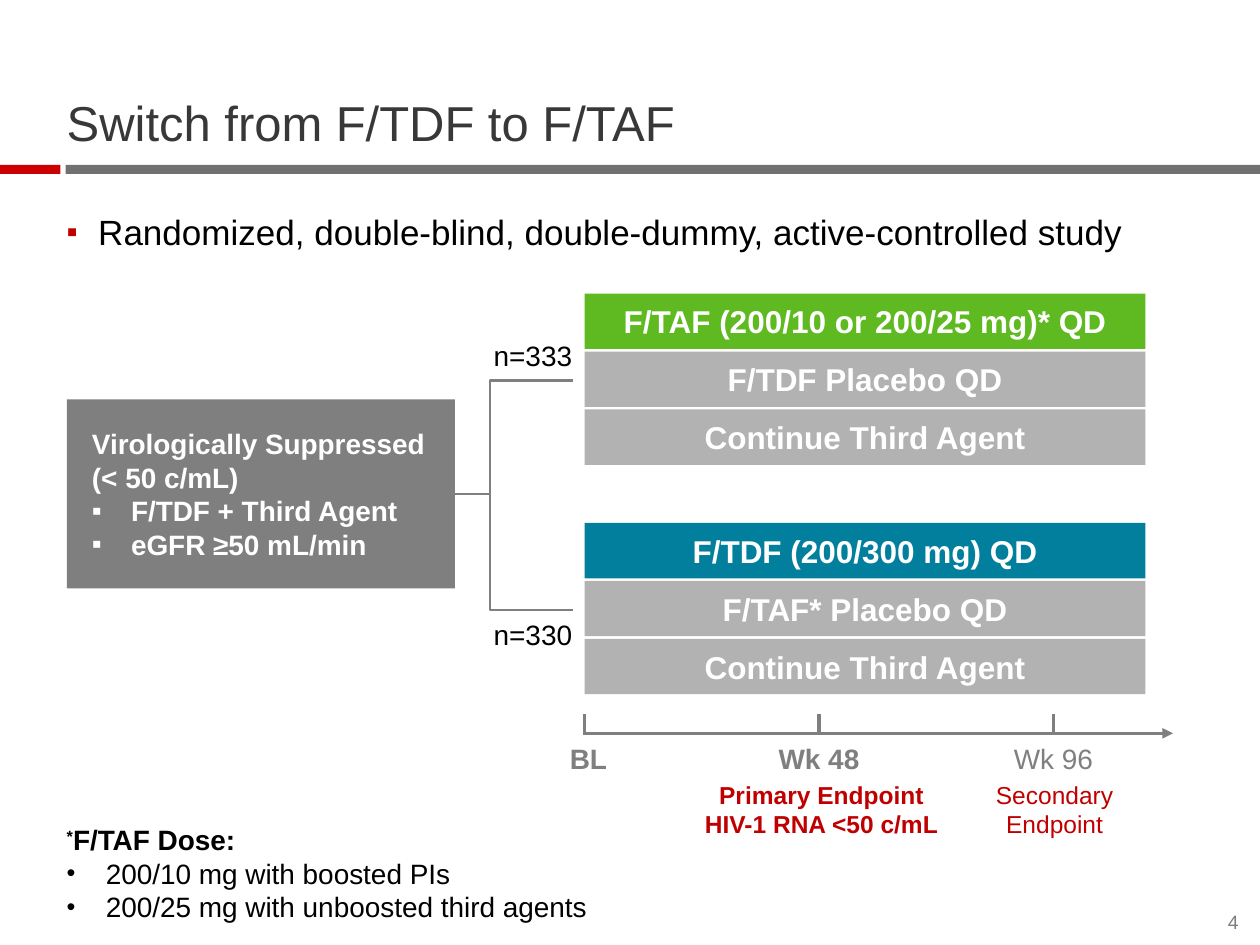
from lxml.etree import SubElement
from pptx import Presentation
from pptx.dml.color import RGBColor
from pptx.enum.shapes import MSO_CONNECTOR, MSO_SHAPE
from pptx.enum.text import MSO_ANCHOR, PP_ALIGN
from pptx.oxml.ns import qn
from pptx.util import Inches, Pt

GREY = "7F7F7F"
RED = "C00000"
WHITE = "FFFFFF"
ARM_LEFT, ARM_WIDTH = 4.64, 4.45
ROW_HEIGHT, ROW_STEP = 0.44, 0.46
DEFAULT_INSETS = (0.1, 0.05, 0.1, 0.05)
NO_INSETS = (0, 0, 0, 0)


def color(hex_value):
    return RGBColor.from_string(hex_value)


def set_bullet(para, char, indent, bullet_color=None, percent=100):
    properties = para._p.get_or_add_pPr()
    properties.set("marL", str(Inches(indent)))
    properties.set("indent", str(Inches(-indent)))
    if bullet_color:
        holder = SubElement(properties, qn("a:buClr"))
        SubElement(holder, qn("a:srgbClr")).set("val", bullet_color)
    SubElement(properties, qn("a:buSzPct")).set("val", str(percent * 1000))
    SubElement(properties, qn("a:buFont")).set("typeface", "Arial")
    SubElement(properties, qn("a:buChar")).set("char", char)


def add_span(para, text, size, ink, bold=False, superscript=False):
    span = para.add_run()
    span.text = text
    span.font.name = "Arial"
    span.font.size = Pt(size)
    span.font.bold = bold
    span.font.color.rgb = color(ink)
    if superscript:
        span.font._element.set("baseline", "30000")


def write(box, text, size=16, ink="000000", bold=False, align=PP_ALIGN.LEFT,
          bullet=None, line_spacing=None, space_before=0):
    """Add one paragraph to a shape; a newline becomes a line break."""
    frame = box.text_frame
    para = frame.paragraphs[0]
    if para.runs:
        para = frame.add_paragraph()
    para.alignment = align
    para.space_before = Pt(space_before)
    if line_spacing:
        para.line_spacing = line_spacing
    if bullet:
        set_bullet(para, **bullet)
    for number, line in enumerate(text.split("\n")):
        if number:
            para.add_line_break()
        if line.startswith("*"):
            add_span(para, "*", size, ink, bold, superscript=True)
            line = line[1:]
        add_span(para, line, size, ink, bold)


def set_frame(box, anchor, insets, wrap=True):
    frame = box.text_frame
    frame.word_wrap = wrap
    frame.vertical_anchor = anchor
    (frame.margin_left, frame.margin_top,
     frame.margin_right, frame.margin_bottom) = map(Inches, insets)


def add_text_box(page, left, top, width, height, anchor=MSO_ANCHOR.TOP,
                 insets=DEFAULT_INSETS, wrap=True):
    box = page.shapes.add_textbox(*map(Inches, (left, top, width, height)))
    set_frame(box, anchor, insets, wrap)
    return box


def add_block(page, left, top, width, height, fill, outline=None,
              kind=MSO_SHAPE.RECTANGLE, insets=DEFAULT_INSETS):
    block = page.shapes.add_shape(kind, *map(Inches, (left, top, width, height)))
    block.shadow.inherit = False
    block.fill.solid()
    block.fill.fore_color.rgb = color(fill)
    if outline:
        block.line.color.rgb = color(outline)
        block.line.width = Pt(1.5)
    else:
        block.line.fill.background()
    set_frame(block, MSO_ANCHOR.MIDDLE, insets)
    return block


def add_line(page, x1, y1, x2, y2, width=2, arrow=False):
    line = page.shapes.add_connector(
        MSO_CONNECTOR.STRAIGHT, *map(Inches, (x1, y1, x2, y2)))
    line.line.color.rgb = color(GREY)
    line.line.width = Pt(width)
    if arrow:
        SubElement(line.line._get_or_add_ln(), qn("a:tailEnd")).set("type", "triangle")
    SubElement(line._element.spPr, qn("a:effectLst"))
    return line


def add_heading(page):
    add_block(page, 0.52, 1.31, 9.48, 0.07, "717171")
    add_block(page, 0, 1.31, 0.48, 0.07, "CC0000")
    title = add_text_box(page, 0.53, 0.47, 9, 0.74, MSO_ANCHOR.BOTTOM, NO_INSETS)
    write(title, "Switch from F/TDF to F/TAF", size=28, ink="383838", line_spacing=0.9)
    design = add_text_box(page, 0.53, 1.67, 9, 0.5, insets=NO_INSETS)
    write(design, "Randomized, double-blind, double-dummy, active-controlled study",
          size=20, space_before=12,
          bullet=dict(char="▪", indent=0.25, bullet_color=RED, percent=90))


def add_population(page):
    add_block(page, 3.89, 3.02, 0.66, 1.82, WHITE, GREY,
              MSO_SHAPE.LEFT_BRACKET).adjustments[0] = 0
    population = add_block(page, 0.53, 3.17, 3.08, 1.5, GREY, insets=(0.2, 0.1, 0.2, 0.1))
    for text in ("Virologically Suppressed", "(< 50 c/mL)"):
        write(population, text, ink=WHITE, bold=True)
    for text in ("F/TDF + Third Agent", "eGFR ≥50 mL/min"):
        write(population, text, ink=WHITE, bold=True, bullet=dict(char="▪", indent=0.31))
    stem = add_line(page, 3.61, 3.92, 3.89, 3.92, width=1.5)
    stem.begin_connect(population, 3)


def add_arm(page, top, fill, treatments, count, count_top):
    for row, treatment in enumerate(treatments):
        block = add_block(page, ARM_LEFT, top + row * ROW_STEP, ARM_WIDTH, ROW_HEIGHT,
                          "B2B2B2" if row else fill)
        write(block, treatment, size=18, ink=WHITE, bold=True, align=PP_ALIGN.CENTER)
    label = add_text_box(page, 3.82, count_top, 0.83, 0.37, wrap=False)
    write(label, count)


def add_timeline(page):
    add_line(page, 4.63, 5.82, 9.31, 5.82, arrow=True)
    visits = [("BL", 4.64, 4.67, True), ("Wk 48", 6.5, 6.5, True),
              ("Wk 96", 8.36, 8.36, False)]
    for visit, tick, center, bold in visits:
        add_line(page, tick, 5.83, tick, 5.67)
        label = add_text_box(page, center - 0.49, 5.84, 0.98, 0.37)
        write(label, visit, ink=GREY, bold=bold, align=PP_ALIGN.CENTER)
    endpoints = [("Primary Endpoint\nHIV-1 RNA <50 c/mL", 5.31, True),
                 ("Secondary\nEndpoint", 7.16, False)]
    for endpoint, left, bold in endpoints:
        label = add_text_box(page, left, 6.14, 2.42, 0.57)
        write(label, endpoint, size=14, ink=RED, bold=bold, align=PP_ALIGN.CENTER)


def add_footer(page):
    doses = add_text_box(page, 0.53, 6.53, 8.9, 0.8, MSO_ANCHOR.BOTTOM, NO_INSETS)
    write(doses, "*F/TAF Dose:", bold=True)
    for dose in ("200/10 mg with boosted PIs", "200/25 mg with unboosted third agents"):
        write(doses, dose, bullet=dict(char="•", indent=0.31, percent=90))
    number = add_text_box(page, 9.56, 7.23, 0.27, 0.18, MSO_ANCHOR.BOTTOM, NO_INSETS)
    write(number, "4", size=11, ink=GREY, align=PP_ALIGN.RIGHT)


def main():
    deck = Presentation()
    deck.slide_width, deck.slide_height = Inches(10), Inches(7.5)
    page = deck.slides.add_slide(deck.slide_layouts[6])
    add_heading(page)
    add_population(page)
    add_arm(page, 2.33, "5EBA20",
            ("F/TAF (200/10 or 200/25 mg)* QD", "F/TDF Placebo QD", "Continue Third Agent"),
            "n=333", 2.64)
    add_arm(page, 4.15, "027F9C",
            ("F/TDF (200/300 mg) QD", "F/TAF* Placebo QD", "Continue Third Agent"),
            "n=330", 4.85)
    add_timeline(page)
    add_footer(page)
    deck.save("out.pptx")


if __name__ == "__main__":
    main()
